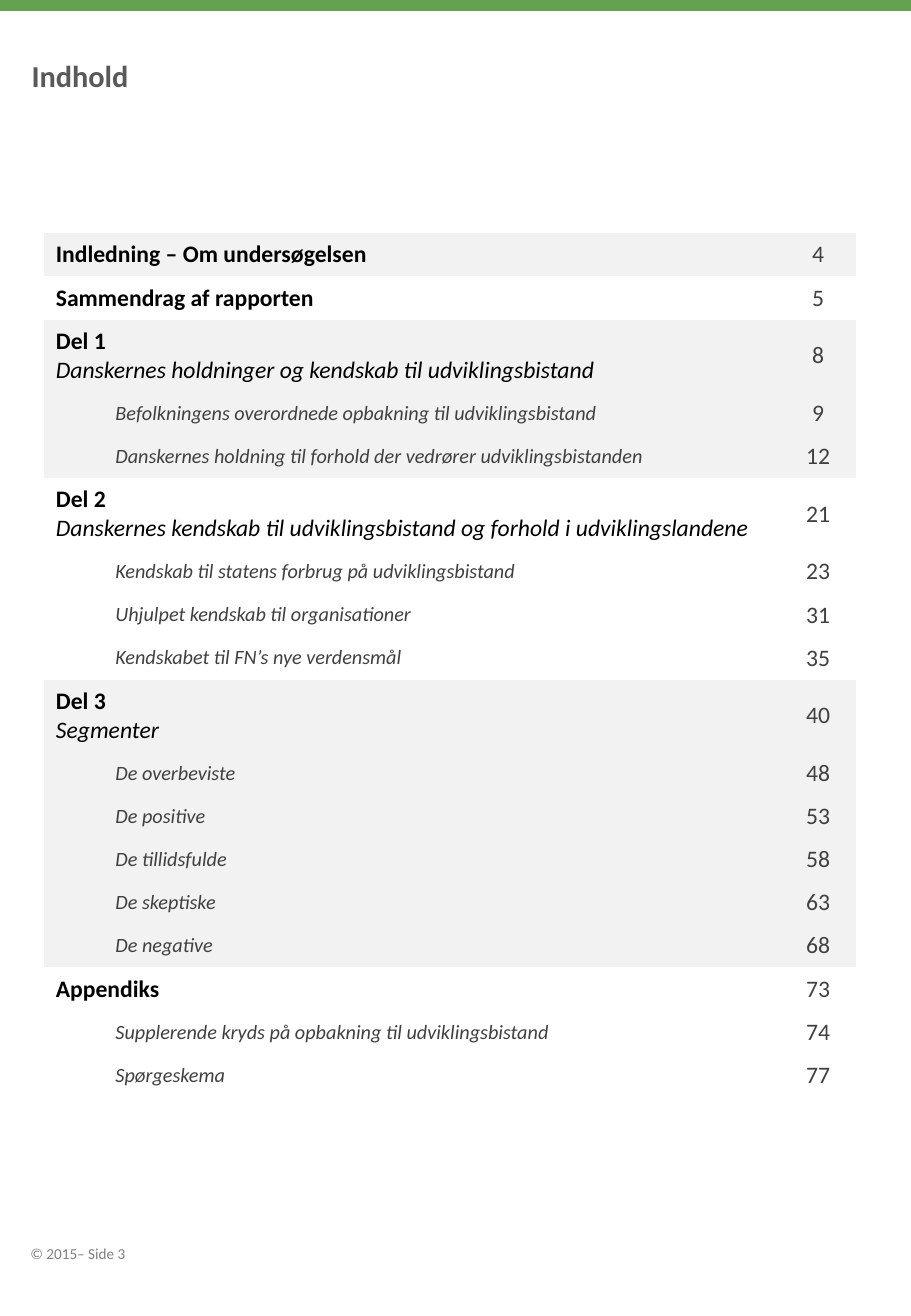
from pptx import Presentation
from pptx.dml.color import RGBColor
from pptx.enum.shapes import MSO_SHAPE
from pptx.enum.text import MSO_ANCHOR, PP_ALIGN
from pptx.oxml.ns import qn
from pptx.util import Emu, Pt

RECTANGLE = MSO_SHAPE.RECTANGLE
MIDDLE = MSO_ANCHOR.MIDDLE
CENTER = PP_ALIGN.CENTER

FONT = "Calibri"
GREEN, SHADE = "64A252", "F2F2F2"
BLACK, DARK, TITLE_GREY, FOOTER_GREY = "000000", "404040", "595959", "808080"
NO_STYLE = "{2D5ABB26-0587-4C30-8999-92F81FD0307C}"

TITLE = "Indhold"
FOOTER = "© 2015– Side 3"

# (heading, subtitle, page, [(entry, page), ...]); every other section is shaded
SECTIONS = [
    ("Indledning – Om undersøgelsen", None, 4, []),
    ("Sammendrag af rapporten", None, 5, []),
    ("Del 1", "Danskernes holdninger og kendskab til udviklingsbistand", 8, [
        ("Befolkningens overordnede opbakning til udviklingsbistand", 9),
        ("Danskernes holdning til forhold der vedrører udviklingsbistanden", 12),
    ]),
    ("Del 2", "Danskernes kendskab til udviklingsbistand og forhold i udviklingslandene", 21, [
        ("Kendskab til statens forbrug på udviklingsbistand", 23),
        ("Uhjulpet kendskab til organisationer", 31),
        ("Kendskabet til FN’s nye verdensmål", 35),
    ]),
    ("Del 3", "Segmenter", 40, [
        ("De overbeviste", 48),
        ("De positive", 53),
        ("De tillidsfulde", 58),
        ("De skeptiske", 63),
        ("De negative", 68),
    ]),
    ("Appendiks", None, 73, [
        ("Supplerende kryds på opbakning til udviklingsbistand", 74),
        ("Spørgeskema", 77),
    ]),
]

# Lengths in px, 200 to the inch
SLIDE_WIDTH, SLIDE_HEIGHT = 1500, 2166
BAR_HEIGHT = 18
TABLE_LEFT, TABLE_TOP = 72, 384
COLUMN_WIDTHS = (1212, 126)
ROW_HEIGHT, TALL_ROW_HEIGHT = 71, 119
ENTRY_INDENT = 98


def px(length):
    return Emu(length * 914400 // 200)


def color(value):
    return RGBColor.from_string(value)


def add_run(paragraph, text, size, text_color, bold=False, italic=False):
    run = paragraph.add_run()
    run.text = text
    font = run.font
    font.name, font.size, font.bold, font.italic = FONT, Pt(size), bold, italic
    font.color.rgb = color(text_color)


def add_label(slide, box, text, size, text_color, bold=False):
    frame = slide.shapes.add_textbox(*map(px, box)).text_frame
    frame.word_wrap = True
    frame.margin_left = frame.margin_right = px(22)
    frame.margin_top = frame.margin_bottom = px(12)
    add_run(frame.paragraphs[0], text, size, text_color, bold)


def contents_rows():
    """Flatten the sections to (heading, subtitle, entry, page, shaded) rows."""
    rows = []
    for index, (heading, subtitle, page, entries) in enumerate(SECTIONS):
        shaded = index % 2 == 0
        rows.append((heading, subtitle, None, page, shaded))
        rows += [(None, None, entry, number, shaded) for entry, number in entries]
    return rows


def add_contents(slide):
    rows = contents_rows()
    heights = [TALL_ROW_HEIGHT if row[1] else ROW_HEIGHT for row in rows]
    contents = slide.shapes.add_table(
        len(rows), len(COLUMN_WIDTHS), px(TABLE_LEFT), px(TABLE_TOP),
        px(sum(COLUMN_WIDTHS)), px(sum(heights))).table
    contents.first_row = contents.horz_banding = False
    contents._tbl.tblPr.find(qn("a:tableStyleId")).text = NO_STYLE
    for column, width in zip(contents.columns, COLUMN_WIDTHS):
        column.width = px(width)

    for index, (heading, subtitle, entry, page, shaded) in enumerate(rows):
        contents.rows[index].height = px(heights[index])
        topic_cell, page_cell = contents.cell(index, 0), contents.cell(index, 1)
        for cell in (topic_cell, page_cell):
            cell.vertical_anchor = MIDDLE
            if shaded:
                cell.fill.solid()
                cell.fill.fore_color.rgb = color(SHADE)
            else:
                cell.fill.background()

        topic = topic_cell.text_frame.paragraphs[0]
        if entry:
            topic._p.get_or_add_pPr().set("marL", str(px(ENTRY_INDENT)))
            add_run(topic, entry, 12, DARK, italic=True)
        else:
            add_run(topic, heading, 14, BLACK, bold=True)
        if subtitle:
            add_run(topic_cell.text_frame.add_paragraph(), subtitle, 14, BLACK, italic=True)

        page_number = page_cell.text_frame.paragraphs[0]
        page_number.alignment = CENTER
        add_run(page_number, str(page), 14, DARK)


def main():
    deck = Presentation()
    deck.slide_width, deck.slide_height = px(SLIDE_WIDTH), px(SLIDE_HEIGHT)
    slide = deck.slides.add_slide(deck.slide_layouts[6])

    bar = slide.shapes.add_shape(RECTANGLE, 0, 0, px(SLIDE_WIDTH), px(BAR_HEIGHT))
    bar.shadow.inherit = False
    bar.fill.solid()
    bar.fill.fore_color.rgb = color(GREEN)
    bar.line.fill.background()

    add_label(slide, (28, 2036, 238, 54), FOOTER, 9, FOOTER_GREY)
    add_label(slide, (30, 82, 1440, 374), TITLE, 18, TITLE_GREY, bold=True)
    add_contents(slide)
    deck.save("out.pptx")


if __name__ == "__main__":
    main()
